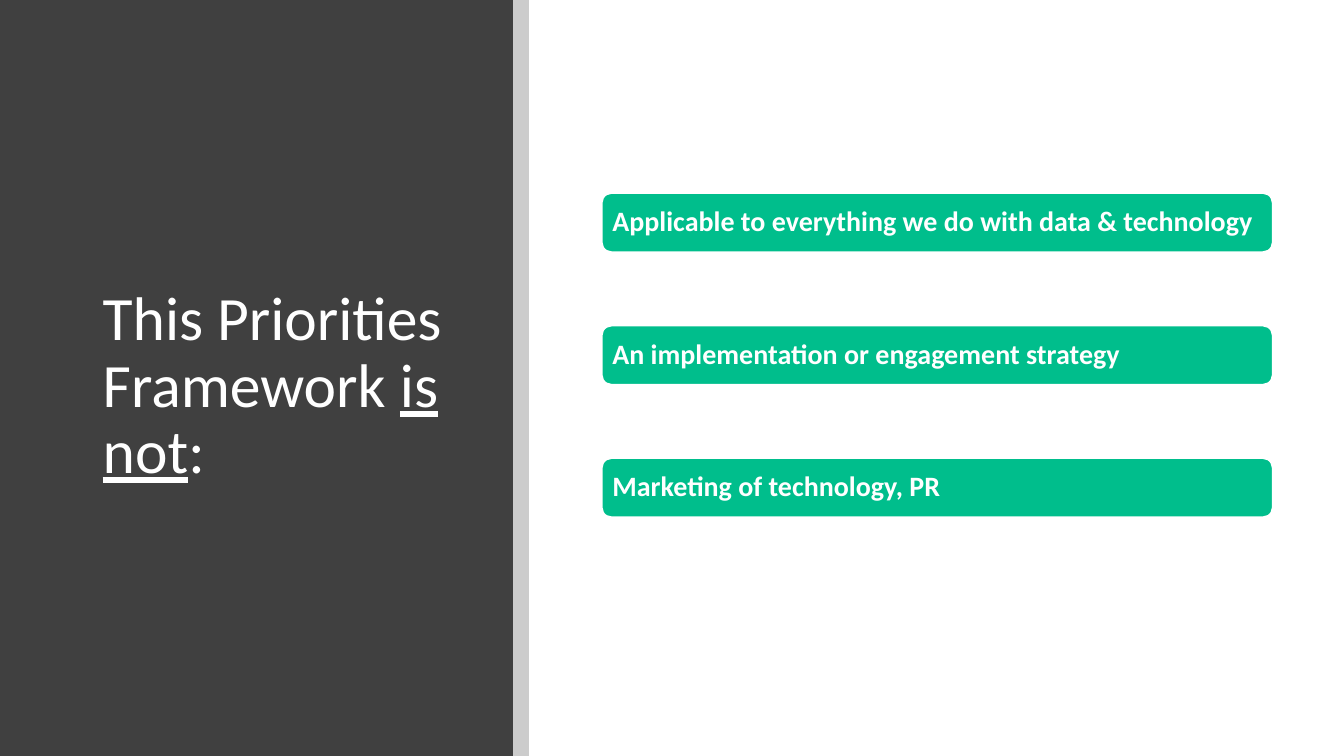
"""Build the slide that lists what the Priorities Framework is not."""
from lxml import etree
from pptx import Presentation
from pptx.dml.color import RGBColor
from pptx.enum.shapes import MSO_SHAPE
from pptx.enum.text import MSO_ANCHOR, PP_ALIGN
from pptx.oxml.ns import qn
from pptx.util import Cm, Pt

RECTANGLE = MSO_SHAPE.RECTANGLE
ROUNDED = MSO_SHAPE.ROUNDED_RECTANGLE
MIDDLE = MSO_ANCHOR.MIDDLE
LEFT = PP_ALIGN.LEFT

FONT = "Calibri"
COLOURS = {"panel": "404040", "strip": "000000", "bar": "00BE8C", "white": "FFFFFF"}
SLIDE_WIDTH, SLIDE_HEIGHT = 33.87, 19.05
PANEL_WIDTH, STRIP_WIDTH = 12.93, 0.4
BAR_LEFT, BAR_TOP, BAR_WIDTH, BAR_HEIGHT = 15.16, 4.86, 16.92, 1.5
BAR_PITCH = 3.34
BAR_INSET = 0.2

TITLE_RUNS = [("This Priorities Framework ", False), ("is not", True), (":", False)]
STATEMENTS = [
    "Applicable to everything we do with data & technology",
    "An implementation or engagement strategy",
    "Marketing of technology, PR",
]


def colour(name):
    return RGBColor.from_string(COLOURS[name])


def add_block(slide, kind, left, top, width, height, fill):
    shape = slide.shapes.add_shape(kind, Cm(left), Cm(top), Cm(width), Cm(height))
    shape.shadow.inherit = False
    shape.fill.solid()
    shape.fill.fore_color.rgb = colour(fill)
    shape.line.fill.background()
    return shape


def set_opacity(shape, percent):
    colour_element = shape.fill._xPr.find(qn("a:solidFill"))[0]
    etree.SubElement(colour_element, qn("a:alpha"), val=str(percent * 1000))


def format_run(run, size, bold=False, underline=False):
    run.font.name = FONT
    run.font.size = Pt(size)
    run.font.bold = bold
    run.font.underline = underline
    run.font.color.rgb = colour("white")


def add_title(slide):
    title = slide.shapes.add_textbox(Cm(2.34), Cm(2.26), Cm(9.27), Cm(15.01))
    text_frame = title.text_frame
    text_frame.word_wrap = True
    text_frame.vertical_anchor = MIDDLE
    paragraph = text_frame.paragraphs[0]
    paragraph.line_spacing = 0.9
    for text, underline in TITLE_RUNS:
        run = paragraph.add_run()
        run.text = text
        format_run(run, 44, underline=underline)


def add_statement_bar(slide, top, text):
    bar = add_block(slide, ROUNDED, BAR_LEFT, top, BAR_WIDTH, BAR_HEIGHT, "bar")
    bar.line.color.rgb = colour("white")
    bar.line.width = Pt(1.5)
    text_frame = bar.text_frame
    text_frame.text = text
    text_frame.word_wrap = True
    text_frame.vertical_anchor = MIDDLE
    text_frame.margin_left = text_frame.margin_right = Cm(BAR_INSET)
    text_frame.margin_top = text_frame.margin_bottom = Cm(BAR_INSET)
    paragraph = text_frame.paragraphs[0]
    paragraph.alignment = LEFT
    paragraph.line_spacing = 0.9
    format_run(paragraph.runs[0], 20, bold=True)


def main():
    presentation = Presentation()
    presentation.slide_width = Cm(SLIDE_WIDTH)
    presentation.slide_height = Cm(SLIDE_HEIGHT)
    slide = presentation.slides.add_slide(presentation.slide_layouts[6])

    add_block(slide, RECTANGLE, 0, 0, PANEL_WIDTH, SLIDE_HEIGHT, "panel")
    strip = add_block(slide, RECTANGLE, PANEL_WIDTH, 0, STRIP_WIDTH, SLIDE_HEIGHT, "strip")
    set_opacity(strip, 20)
    add_title(slide)
    for index, statement in enumerate(STATEMENTS):
        add_statement_bar(slide, BAR_TOP + index * BAR_PITCH, statement)

    presentation.save("out.pptx")


if __name__ == "__main__":
    main()
